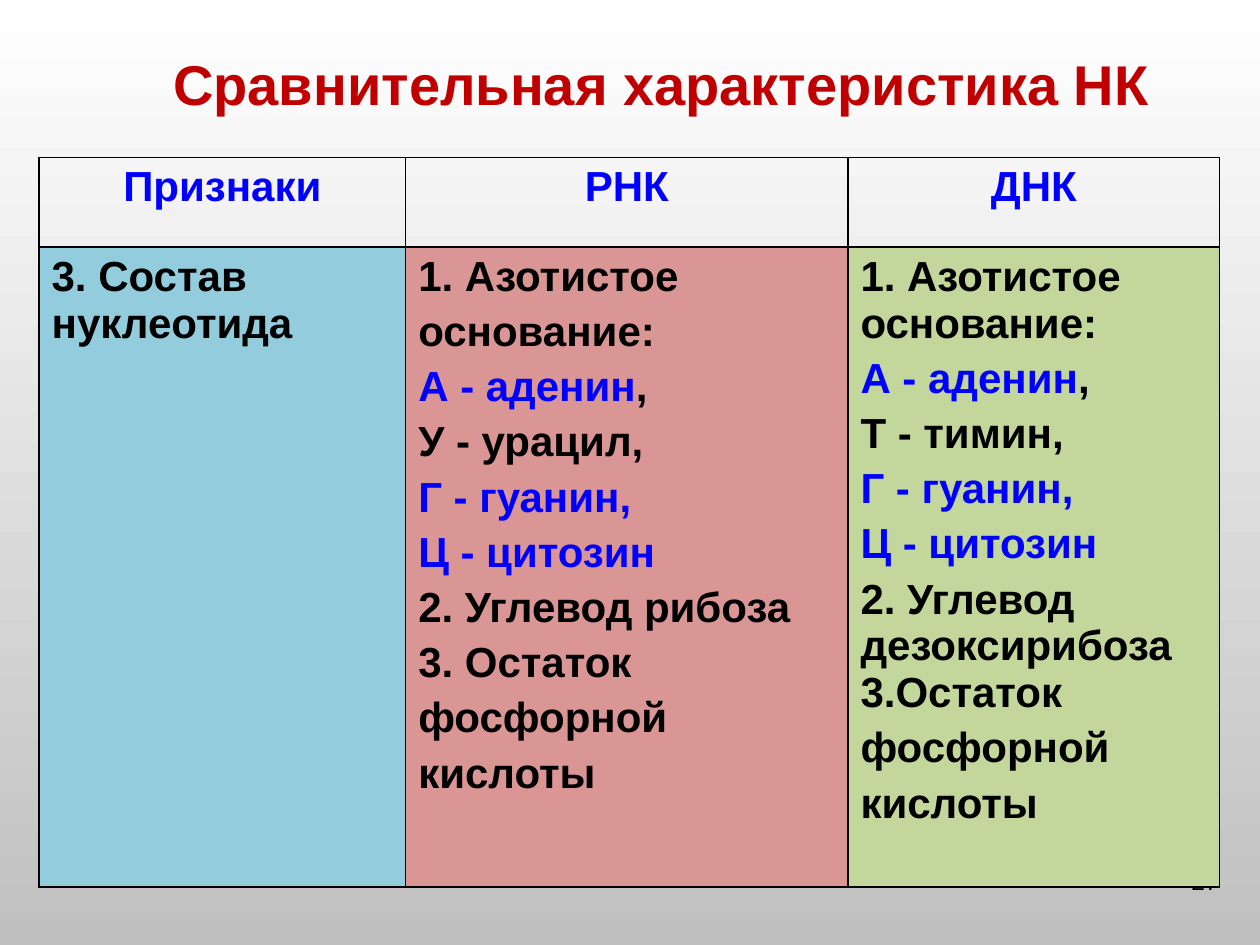
from lxml.etree import SubElement
from pptx import Presentation
from pptx.dml.color import RGBColor
from pptx.enum.text import MSO_ANCHOR, PP_ALIGN
from pptx.oxml.ns import qn
from pptx.util import Inches, Pt

FONT = "Arial"
BLACK = RGBColor(0x00, 0x00, 0x00)
WHITE = RGBColor(0xFF, 0xFF, 0xFF)
GREY = RGBColor(0xC0, 0xC0, 0xC0)
RED = RGBColor(0xC0, 0x00, 0x00)
BLUE = RGBColor(0x00, 0x00, 0xFF)
COLUMN_FILLS = [RGBColor(0x93, 0xCD, 0xDD), RGBColor(0xD9, 0x96, 0x94),
                RGBColor(0xC3, 0xD6, 0x9B)]

COLUMN_WIDTHS = [2.91, 3.51, 2.95]
ROW_HEIGHTS = [0.71, 5.08]
HEADERS = ["Признаки", "РНК", "ДНК"]

# Each paragraph is a list of (text, colour) runs
ADENINE = [("А - аденин", BLUE), (",", BLACK)]
GUANINE_CYTOSINE = [[("Г - гуанин,", BLUE)], [("Ц - цитозин", BLUE)]]


def plain(*lines):
    return [[(line, BLACK)] for line in lines]


FEATURE = plain("3. Состав нуклеотида")
RNA = [*plain("1. Азотистое", "основание:"), ADENINE, *plain("У - урацил,"),
       *GUANINE_CYTOSINE,
       *plain("2. Углевод рибоза", "3. Остаток", "фосфорной", "кислоты")]
DNA = [*plain("1. Азотистое основание:"), ADENINE, *plain("Т - тимин,"),
       *GUANINE_CYTOSINE,
       *plain("2. Углевод дезоксирибоза 3.Остаток", "фосфорной", "кислоты")]


def set_font(paragraph, size, color=None, bold=False):
    font = paragraph.font
    font.name, font.size, font.bold = FONT, Pt(size), bold
    if color is not None:
        font.color.rgb = color


def paint_background(slide):
    fill = slide.background.fill
    fill.gradient()
    fill.gradient_angle = 270
    for stop, color in zip(fill.gradient_stops, (WHITE, GREY)):
        stop.color.rgb = color


def place_title(slide, text):
    title = slide.shapes.title
    title.left, title.top = Inches(1), Inches(0.28)
    title.width, title.height = Inches(8.5), Inches(0.76)
    frame = title.text_frame
    frame.text = text
    frame.vertical_anchor = MSO_ANCHOR.MIDDLE
    heading = frame.paragraphs[0]
    heading.alignment = PP_ALIGN.CENTER
    set_font(heading, 32, RED, bold=True)


def add_page_number(slide, number):
    box = slide.shapes.add_textbox(Inches(7.44), Inches(6.82),
                                   Inches(2.33), Inches(0.52))
    frame = box.text_frame
    frame.word_wrap = True
    frame.text = number
    frame.paragraphs[0].alignment = PP_ALIGN.RIGHT
    set_font(frame.paragraphs[0], 14, BLACK)


def add_borders(cell):
    properties = cell._tc.get_or_add_tcPr()
    for side in ("a:lnL", "a:lnR", "a:lnT", "a:lnB"):
        line = SubElement(properties, qn(side), w=str(Pt(1)))
        fill = SubElement(line, qn("a:solidFill"))
        SubElement(fill, qn("a:srgbClr"), val=str(BLACK))


def fill_cell(cell, paragraphs, fill_color=None, alignment=PP_ALIGN.LEFT):
    add_borders(cell)
    if fill_color is None:
        cell.fill.background()
    else:
        cell.fill.solid()
        cell.fill.fore_color.rgb = fill_color
    frame = cell.text_frame
    for index, runs in enumerate(paragraphs):
        paragraph = frame.add_paragraph() if index else frame.paragraphs[0]
        paragraph.alignment = alignment
        if index:
            paragraph.space_before = Pt(4.8)
        set_font(paragraph, 24, bold=True)
        for text, color in runs:
            run = paragraph.add_run()
            run.text = text
            run.font.color.rgb = color


def add_comparison(slide):
    table = slide.shapes.add_table(
        len(ROW_HEIGHTS), len(COLUMN_WIDTHS), Inches(0.31), Inches(1.25),
        Inches(sum(COLUMN_WIDTHS)), Inches(sum(ROW_HEIGHTS))).table
    table.first_row = table.horz_banding = False
    for column, width in zip(table.columns, COLUMN_WIDTHS):
        column.width = Inches(width)
    for row, height in zip(table.rows, ROW_HEIGHTS):
        row.height = Inches(height)
    contents = zip(HEADERS, (FEATURE, RNA, DNA), COLUMN_FILLS)
    for index, (header, body, color) in enumerate(contents):
        fill_cell(table.cell(0, index), [[(header, BLUE)]],
                  alignment=PP_ALIGN.CENTER)
        fill_cell(table.cell(1, index), body, color)


def main():
    presentation = Presentation()
    presentation.slide_width, presentation.slide_height = Inches(10), Inches(7.5)
    slide = presentation.slides.add_slide(presentation.slide_layouts[5])
    paint_background(slide)
    place_title(slide, "Сравнительная характеристика НК")
    # The table partly covers the page number
    add_page_number(slide, "27")
    add_comparison(slide)
    presentation.save("out.pptx")


if __name__ == "__main__":
    main()
